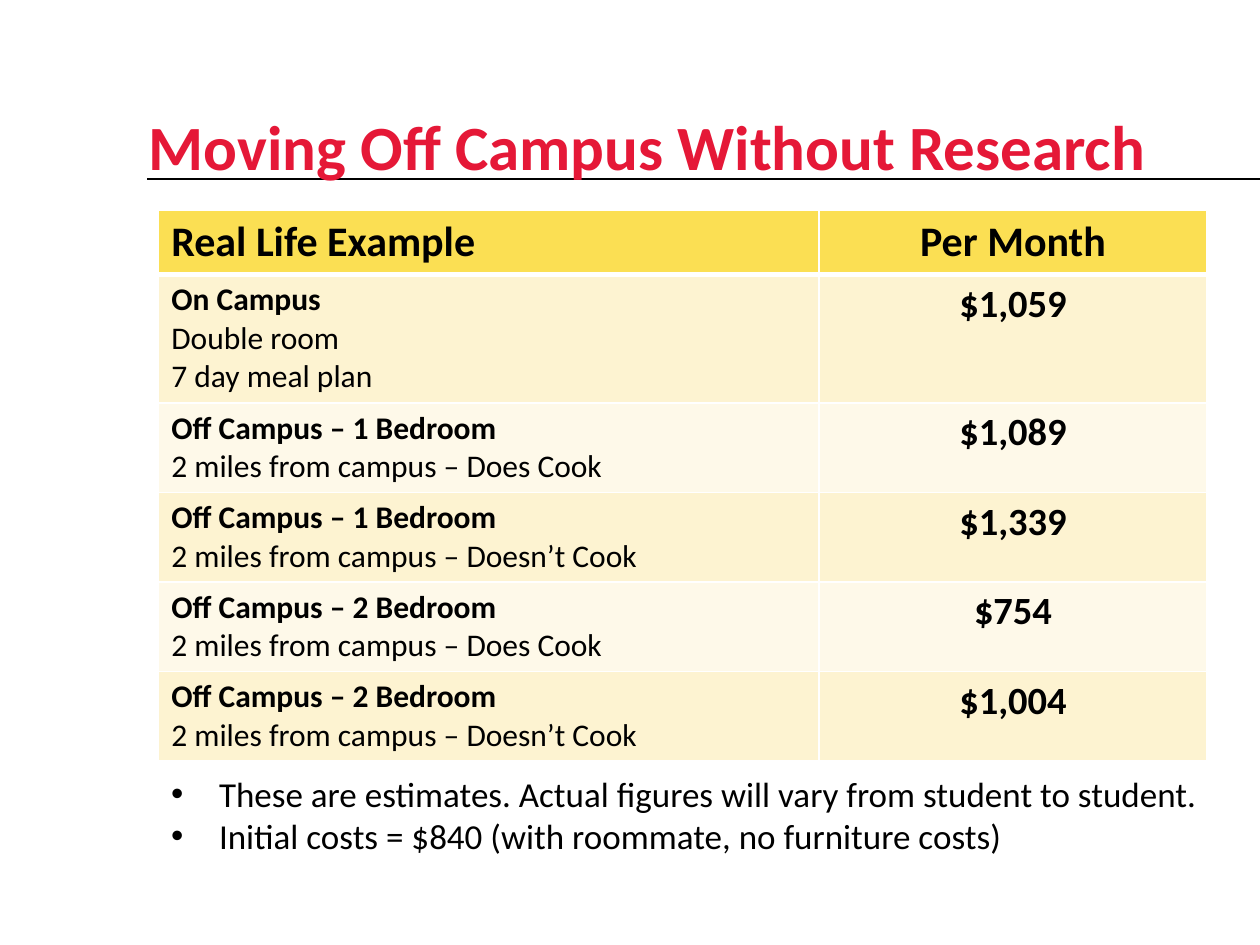
from dataclasses import dataclass

from lxml.etree import SubElement
from pptx import Presentation
from pptx.dml.color import RGBColor
from pptx.enum.shapes import MSO_CONNECTOR as Connector
from pptx.enum.text import MSO_ANCHOR as Anchor, MSO_AUTO_SIZE as AutoSize, PP_ALIGN as Align
from pptx.oxml import parse_xml
from pptx.oxml.ns import nsdecls, qn
from pptx.util import Inches, Pt


@dataclass(frozen=True)
class Theme:
    font: str = "Calibri"
    red: str = "E51837"
    black: str = "000000"
    white: str = "FFFFFF"
    header: str = "FBDF53"
    bands: tuple = ("FDF3D1", "FEF9E9")
    title_size: int = 36
    header_size: int = 24
    cost_size: int = 22
    note_size: int = 20
    detail_size: int = 18


@dataclass(frozen=True)
class Option:
    name: str
    details: tuple
    cost: str
    height: float = 0.71


THEME = Theme()
OPTIONS = [
    Option("On Campus", ("Double room", "7 day meal plan"), "$1,059", 1.02),
    Option("Off Campus – 1 Bedroom", ("2 miles from campus – Does Cook",), "$1,089"),
    Option("Off Campus – 1 Bedroom", ("2 miles from campus – Doesn’t Cook",), "$1,339"),
    Option("Off Campus – 2 Bedroom", ("2 miles from campus – Does Cook",), "$754"),
    Option("Off Campus – 2 Bedroom", ("2 miles from campus – Doesn’t Cook",), "$1,004"),
]
NOTES = [
    "These are estimates. Actual figures will vary from student to student.",
    "Initial costs = $840 (with roommate, no furniture costs)",
]
HEADER_HEIGHT = 0.5
COLUMN_WIDTHS = (5.24, 3.08)


def add_span(para, text: str, size: int, bold: bool = False, color: str = THEME.black) -> None:
    span = para.add_run()
    span.text = text
    font = span.font
    font.name, font.size, font.bold = THEME.font, Pt(size), bold
    font.color.rgb = RGBColor.from_string(color)


def next_para(frame, index: int):
    return frame.paragraphs[0] if index == 0 else frame.add_paragraph()


def style_cell(cell, fill: str, bottom_width: float = 1, top_width: float = 1) -> None:
    cell.fill.solid()
    cell.fill.fore_color.rgb = RGBColor.from_string(fill)
    widths = {"lnL": 1, "lnR": 1, "lnT": top_width, "lnB": bottom_width}
    for position, (tag, width) in enumerate(widths.items()):
        border = parse_xml(
            f'<a:{tag} {nsdecls("a")} w="{Pt(width)}"><a:solidFill>'
            f'<a:srgbClr val="{THEME.white}"/></a:solidFill></a:{tag}>')
        cell._tc.get_or_add_tcPr().insert(position, border)


def add_rule(page) -> None:
    rule = page.shapes.add_connector(
        Connector.STRAIGHT, Inches(1.17), Inches(1.42), Inches(10), Inches(1.42))
    rule.line.color.rgb = RGBColor.from_string(THEME.black)
    rule.line.width = Pt(0.75)
    SubElement(rule._element.spPr, qn("a:effectLst"))
    # Keep the rule behind the title
    page.shapes._spTree.insert(2, rule._element)


def format_title(page, text: str) -> None:
    title = page.shapes.title
    title.left, title.top = Inches(1.08), Inches(0.42)
    title.width, title.height = Inches(8.5), Inches(1.08)
    frame = title.text_frame
    frame.vertical_anchor, frame.auto_size = Anchor.BOTTOM, AutoSize.NONE
    para = frame.paragraphs[0]
    para.alignment, para.line_spacing = Align.LEFT, 0.8
    add_span(para, text, THEME.title_size, True, THEME.red)


def add_cost_table(page, options: list[Option]) -> None:
    heights = [HEADER_HEIGHT] + [option.height for option in options]
    table = page.shapes.add_table(
        len(heights), len(COLUMN_WIDTHS), Inches(1.26), Inches(1.67),
        Inches(sum(COLUMN_WIDTHS)), Inches(sum(heights))).table
    for column, width in zip(table.columns, COLUMN_WIDTHS):
        column.width = Inches(width)
    for row, height in zip(table.rows, heights):
        row.height = Inches(height)

    # Header row
    for column, (text, align) in enumerate(
            [("Real Life Example", Align.LEFT), ("Per Month", Align.CENTER)]):
        cell = table.cell(0, column)
        style_cell(cell, THEME.header, bottom_width=3)
        para = cell.text_frame.paragraphs[0]
        para.alignment = align
        add_span(para, text, THEME.header_size, True)

    # One banded row per housing option
    for row, option in enumerate(options, start=1):
        living, cost = table.cell(row, 0), table.cell(row, 1)
        for cell in (living, cost):
            style_cell(cell, THEME.bands[(row - 1) % 2], top_width=3 if row == 1 else 1)
        for index, line in enumerate((option.name, *option.details)):
            add_span(next_para(living.text_frame, index), line, THEME.detail_size, index == 0)
        para = cost.text_frame.paragraphs[0]
        para.alignment = Align.CENTER
        add_span(para, option.cost, THEME.cost_size, True)


def add_notes(page, notes: list[str]) -> None:
    box = page.shapes.add_textbox(Inches(1.26), Inches(6.08), Inches(8.41), Inches(0.77))
    frame = box.text_frame
    frame.word_wrap, frame.auto_size = True, AutoSize.SHAPE_TO_FIT_TEXT
    for index, note in enumerate(notes):
        para = next_para(frame, index)
        properties = para._p.get_or_add_pPr()
        properties.set("marL", str(Inches(0.38)))
        properties.set("indent", str(-Inches(0.38)))
        SubElement(properties, qn("a:buFont")).set("typeface", "Arial")
        SubElement(properties, qn("a:buChar")).set("char", "•")
        add_span(para, note, THEME.note_size)


def main() -> None:
    deck = Presentation()
    deck.slide_width, deck.slide_height = Inches(10), Inches(7.5)
    page = deck.slides.add_slide(deck.slide_layouts[5])
    add_rule(page)
    format_title(page, "Moving Off Campus Without Research")
    add_cost_table(page, OPTIONS)
    add_notes(page, NOTES)
    deck.save("out.pptx")


if __name__ == "__main__":
    main()
